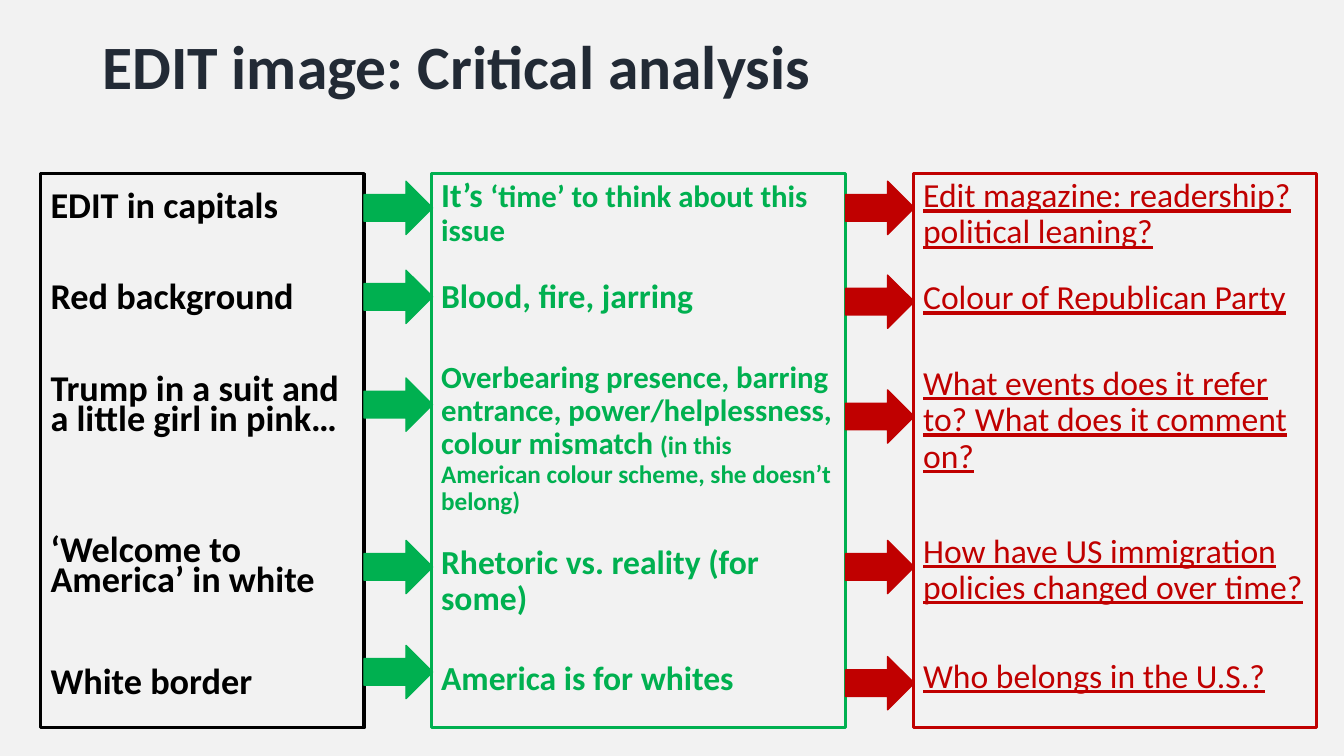
from dataclasses import dataclass
from pptx import Presentation
from pptx import util as u
from pptx.dml.color import RGBColor
from pptx.enum import shapes, text

Pt = u.Pt


@dataclass(frozen=True)
class Theme:
    font: str = "Calibri"
    back: str = "F2F2F2"
    title: str = "222A35"
    black: str = "000000"
    green: str = "00B050"
    red: str = "C00000"
    head: float = 44
    point: float = 25.9
    body: float = 24
    mid: float = 22
    small: float = 18


class Deck:
    def __init__(self, theme):
        self.theme = theme
        self.prs = Presentation()
        self.prs.slide_width, self.prs.slide_height = Pt(960), Pt(540)
        self.slide = self.prs.slides.add_slide(self.prs.slide_layouts[6])
        self.fill(self.slide.background, theme.back)

    def fill(self, item, color):
        item.fill.solid()
        item.fill.fore_color.rgb = RGBColor.from_string(color)

    def shape(self, kind, box, color, width):
        item = self.slide.shapes.add_shape(kind, *map(Pt, box))
        item.shadow.inherit = False
        item.line.color.rgb = RGBColor.from_string(color)
        item.line.width = Pt(width)
        return item

    def words(self, para, runs, color, lead, bold=False, under=False):
        """Fill a paragraph with (wording, size) runs."""
        para.alignment = text.PP_ALIGN.LEFT
        para.line_spacing = lead
        font = para.font
        font.name = self.theme.font
        font.color.rgb = RGBColor.from_string(color)
        font.bold, font.underline = bold, under
        base = runs[0][1]
        font.size = Pt(base)
        for line, size in runs:
            run = para.add_run()
            run.text = line
            if size != base:
                run.font.size = Pt(size)

    def title(self, line, box):
        frame = self.slide.shapes.add_textbox(*map(Pt, box)).text_frame
        frame.word_wrap = True
        frame.vertical_anchor = text.MSO_ANCHOR.MIDDLE
        self.words(frame.paragraphs[0], [(line, self.theme.head)],
                   self.theme.title, 0.9, bold=True)

    def panel(self, box, color, items, lead=0.9, inset=3.6, **style):
        """Draw an outlined column; items are (space before, runs)."""
        item = self.shape(shapes.MSO_SHAPE.RECTANGLE, box, color, 2.25)
        item.fill.background()
        frame = item.text_frame
        frame.word_wrap = True
        frame.vertical_anchor = text.MSO_ANCHOR.TOP
        frame.margin_top = Pt(inset)
        for i, (gap, runs) in enumerate(items):
            para = frame.add_paragraph() if i else frame.paragraphs[0]
            para.space_before = Pt(gap)
            self.words(para, runs, color, lead, **style)

    def arrows(self, left, tops, color):
        for top in tops:
            item = self.shape(shapes.MSO_SHAPE.RIGHT_ARROW,
                              (left, top, 49, 38), color, 1)
            self.fill(item, color)


def main():
    th = Theme()
    deck = Deck(th)
    deck.title("EDIT image: Critical analysis", (66, -2, 828, 104))

    top, high = 124, 396
    points = [
        (0, "EDIT in capitals"),
        (43.7, "Red background"),
        (43.7, "Trump in a suit and a little girl in pink…"),
        (71.3, "‘Welcome to America’ in white"),
        (50.8, "White border"),
    ]
    deck.panel((29, top, 231, high), th.black,
               [(gap, [(line, th.point)]) for gap, line in points],
               lead=0.7, inset=14.4, bold=True)

    ideas = [
        (0, [("It’s ", th.body),
             ("‘time’ to think about this issue", th.mid)]),
        (22.2, [("Blood, fire, jarring", th.body)]),
        (33.2, [("Overbearing presence, barring entrance, "
                 "power/helplessness, colour mismatch ", th.mid),
                ("(in this American colour scheme, she doesn’t belong)",
                 th.small)]),
        (21.1, [("Rhetoric vs. reality (for some)", th.body)]),
        (31, [("America is for whites", th.body)]),
    ]
    deck.panel((308, top, 296, high), th.green, ideas, bold=True)

    context = [
        (0, "Edit magazine: readership? political leaning?"),
        (21.1, "Colour of Republican Party"),
        (35.4, "What events does it refer to? What does it comment on?"),
        (42, "How have US immigration policies changed over time?"),
        (37.6, "Who belongs in the U.S.?"),
    ]
    deck.panel((652.3, top, 288, high), th.red,
               [(gap, [(line, th.body)]) for gap, line in context],
               under=True)

    deck.arrows(260, (129.5, 193, 270, 386, 461), th.green)
    deck.arrows(604, (129.5, 196.5, 278.5, 386, 469), th.red)
    deck.prs.save("out.pptx")


if __name__ == "__main__":
    main()
